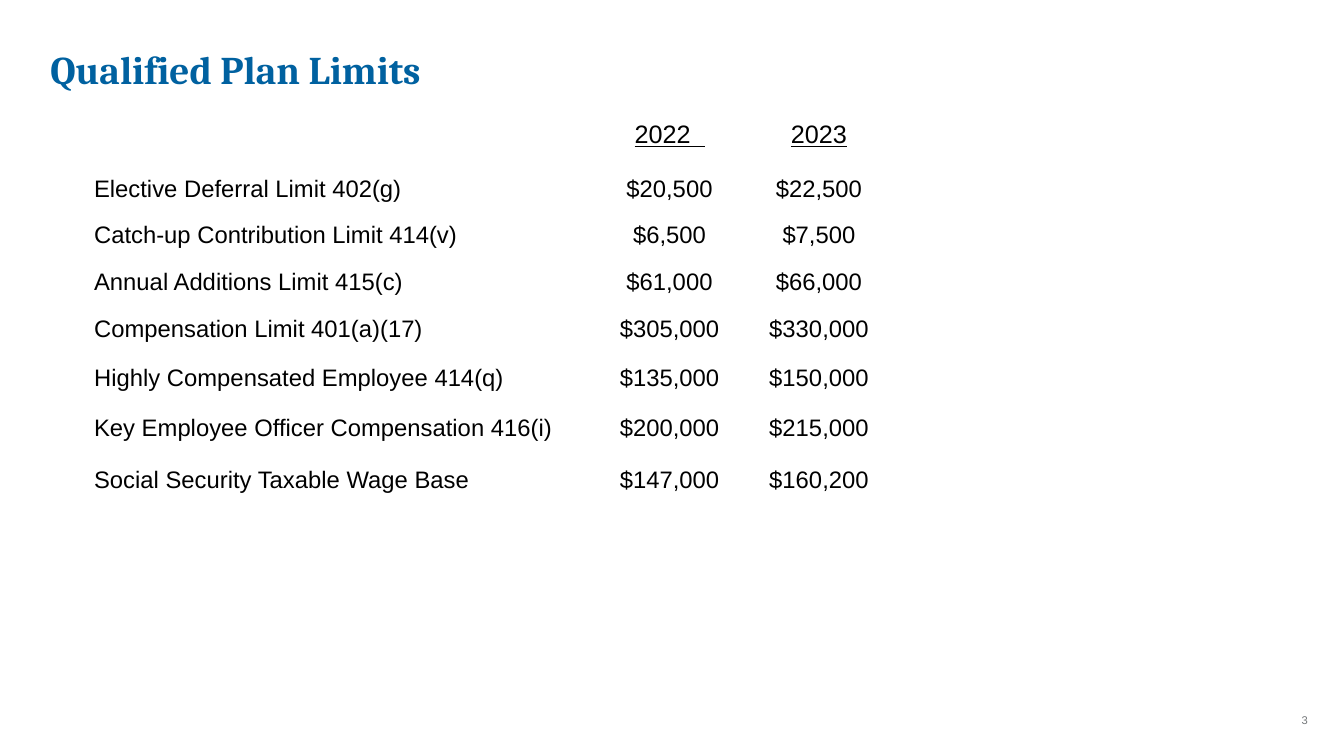
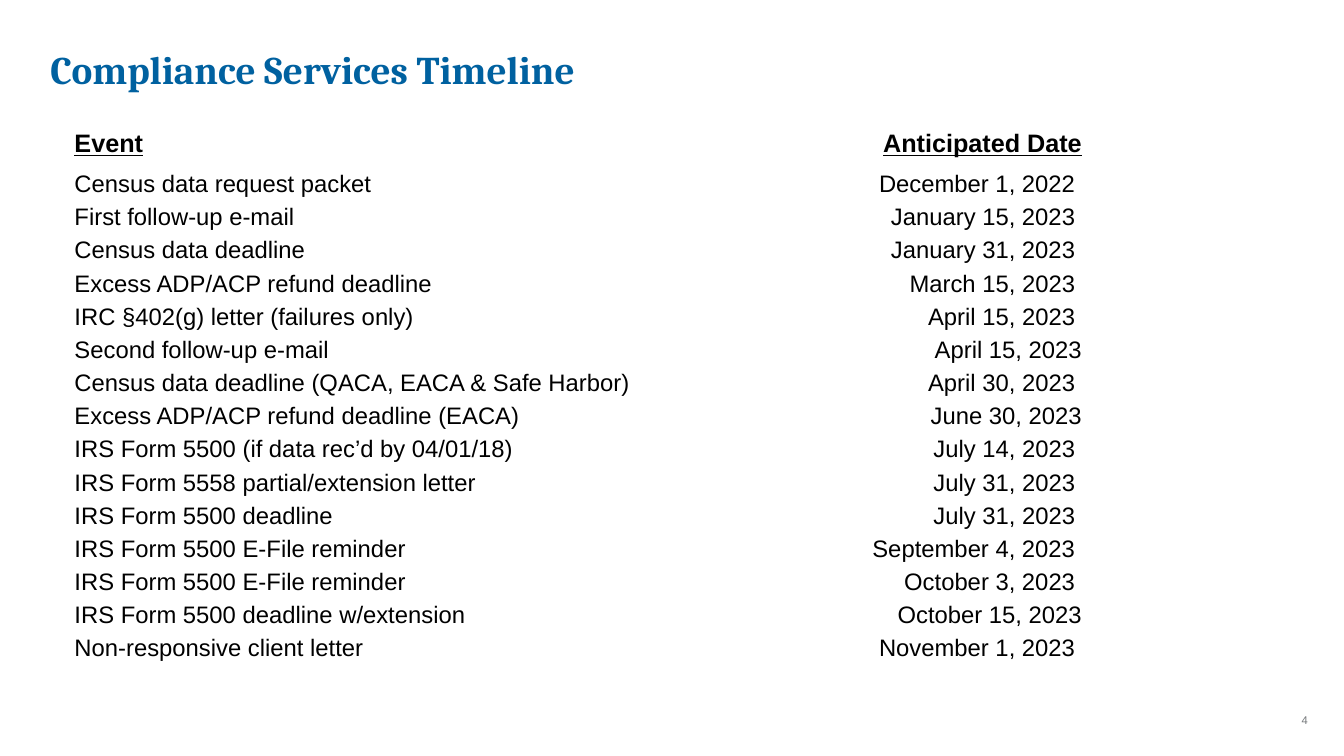
from pptx import Presentation
from pptx.dml.color import RGBColor as Rgb
from pptx.enum.text import MSO_ANCHOR as Anchor, PP_ALIGN as Align
from pptx.util import Pt

LIMITS = [
    ("", "2022  ", "2023"),
    ("Elective Deferral Limit 402(g)", "$20,500", "$22,500"),
    ("Catch-up Contribution Limit 414(v)", "$6,500", "$7,500"),
    ("Annual Additions Limit 415(c)", "$61,000", "$66,000"),
    ("Compensation Limit 401(a)(17)", "$305,000", "$330,000"),
    ("Highly Compensated Employee 414(q)", "$135,000", "$150,000"),
    ("Key Employee Officer Compensation 416(i)", "$200,000", "$215,000"),
    ("Social Security Taxable Wage Base", "$147,000", "$160,200"),
]
EVENTS = [
    ("Event", "Anticipated Date"),
    ("Census data request packet", "December 1, 2022 "),
    ("First follow-up e-mail", "January 15, 2023 "),
    ("Census data deadline", "January 31, 2023 "),
    ("Excess ADP/ACP refund deadline", "March 15, 2023 "),
    ("IRC §402(g) letter (failures only)", "April 15, 2023 "),
    ("Second follow-up e-mail", "April 15, 2023"),
    ("Census data deadline (QACA, EACA & Safe Harbor)", "April 30, 2023 "),
    ("Excess ADP/ACP refund deadline (EACA)", "June 30, 2023"),
    ("IRS Form 5500 (if data rec’d by 04/01/18)", "July 14, 2023 "),
    ("IRS Form 5558 partial/extension letter", "July 31, 2023 "),
    ("IRS Form 5500 deadline", "July 31, 2023 "),
    ("IRS Form 5500 E-File reminder", "September 4, 2023 "),
    ("IRS Form 5500 E-File reminder", "October 3, 2023 "),
    ("IRS Form 5500 deadline w/extension", "October 15, 2023"),
    ("Non-responsive client letter", "November 1, 2023 "),
]


class Deck:
    """Hold the shared style and the current slide."""

    colors = {"title": "0061A0", "text": "000000", "number": "75787B"}
    fonts = {"title": "Cambria", "text": "Arial", "number": "Arial"}

    def __init__(self):
        self.prs = Presentation()
        self.prs.slide_width, self.prs.slide_height = Pt(960), Pt(540)

    def label(self, frame, text, role, size, align=Align.LEFT, bold=False, under=False):
        para = frame.paragraphs[0]
        para.text, para.alignment = text, align
        font = para.font
        font.name, font.size = self.fonts[role], Pt(size)
        font.bold, font.underline = bold, under
        font.color.rgb = Rgb.from_string(self.colors[role])
        return para

    def box(self, left, top, width, height):
        frame = self.slide.shapes.add_textbox(Pt(left), Pt(top), Pt(width), Pt(height)).text_frame
        frame.word_wrap = True
        return frame

    def page(self, title, number):
        self.slide = self.prs.slides.add_slide(self.prs.slide_layouts[6])
        frame = self.box(904, 505.5, 56, 18)
        frame.vertical_anchor = Anchor.MIDDLE
        self.label(frame, str(number), "number", 8, Align.CENTER)
        frame = self.box(36, 36, 744.5, 57.6)
        frame.margin_left = frame.margin_right = frame.margin_top = frame.margin_bottom = 0
        self.label(frame, title, "title", 28, bold=True).line_spacing = 0.9

    def table(self, left, top, cols, heights, rows, align, anchor=Anchor.TOP, pad=3.6, bold=False):
        table = self.slide.shapes.add_table(
            len(rows), len(cols), Pt(left), Pt(top), Pt(sum(cols)), Pt(sum(heights))
        ).table
        table.first_row = table.horz_banding = False
        for col, width in zip(table.columns, cols):
            col.width = Pt(width)
        for r, (values, height) in enumerate(zip(rows, heights)):
            table.rows[r].height = Pt(height)
            head = r == 0
            for c, text in enumerate(values):
                cell = table.cell(r, c)
                cell.fill.background()
                cell.vertical_anchor = anchor
                cell.margin_top = cell.margin_bottom = Pt(3.6 if head else pad)
                self.label(cell.text_frame, text, "text", 18 if head else 17,
                           align if c else Align.LEFT, bold and head, head)


def main():
    deck = Deck()
    deck.page("Qualified Plan Limits", 3)
    deck.table(60, 82.8, [362.5, 111.5, 102], [38.9, 33.1, 33.8, 33.1, 35.3, 36, 36.7, 44.6],
               LIMITS, Align.CENTER)
    deck.page("Compliance Services Timeline", 4)
    deck.table(46, 84.2, [528.5, 205.5], [32.4, 24.5] + [23.72] * 14,
               EVENTS, Align.RIGHT, Anchor.BOTTOM, 0, True)
    deck.prs.save("out.pptx")


if __name__ == "__main__":
    main()
